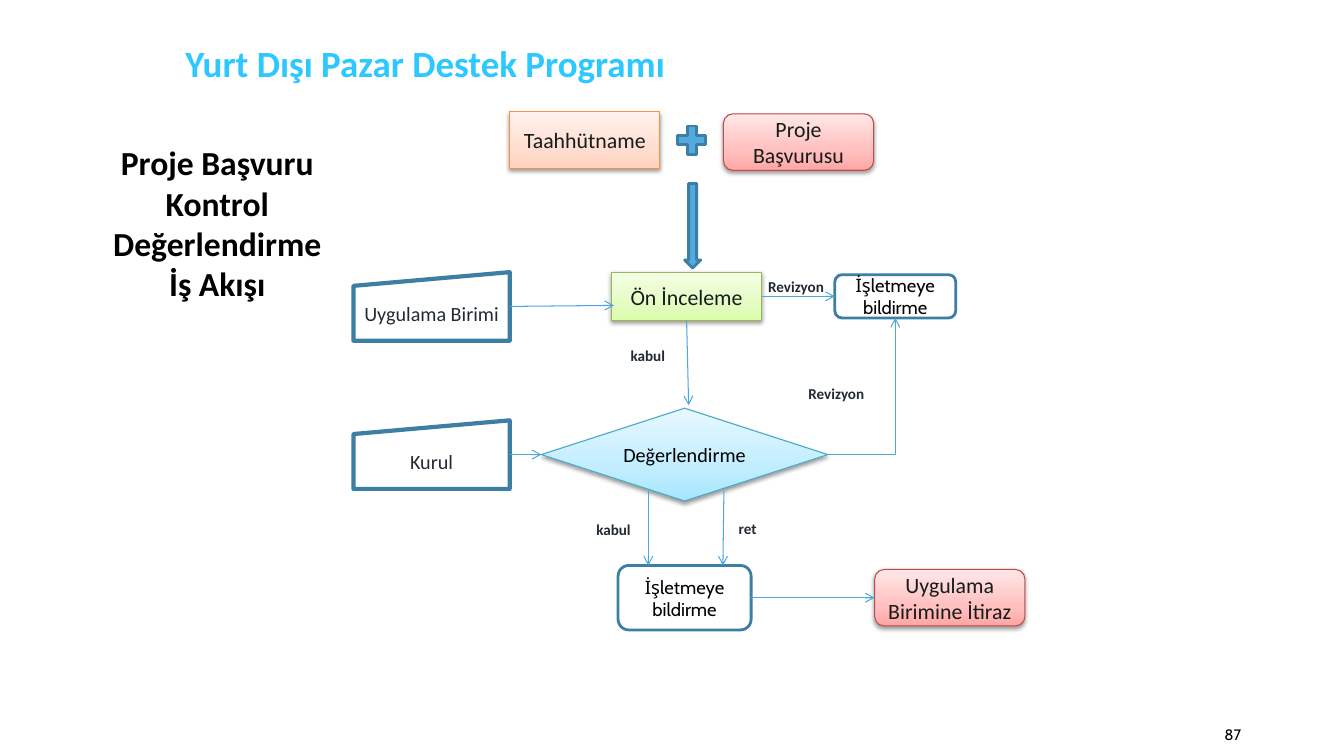
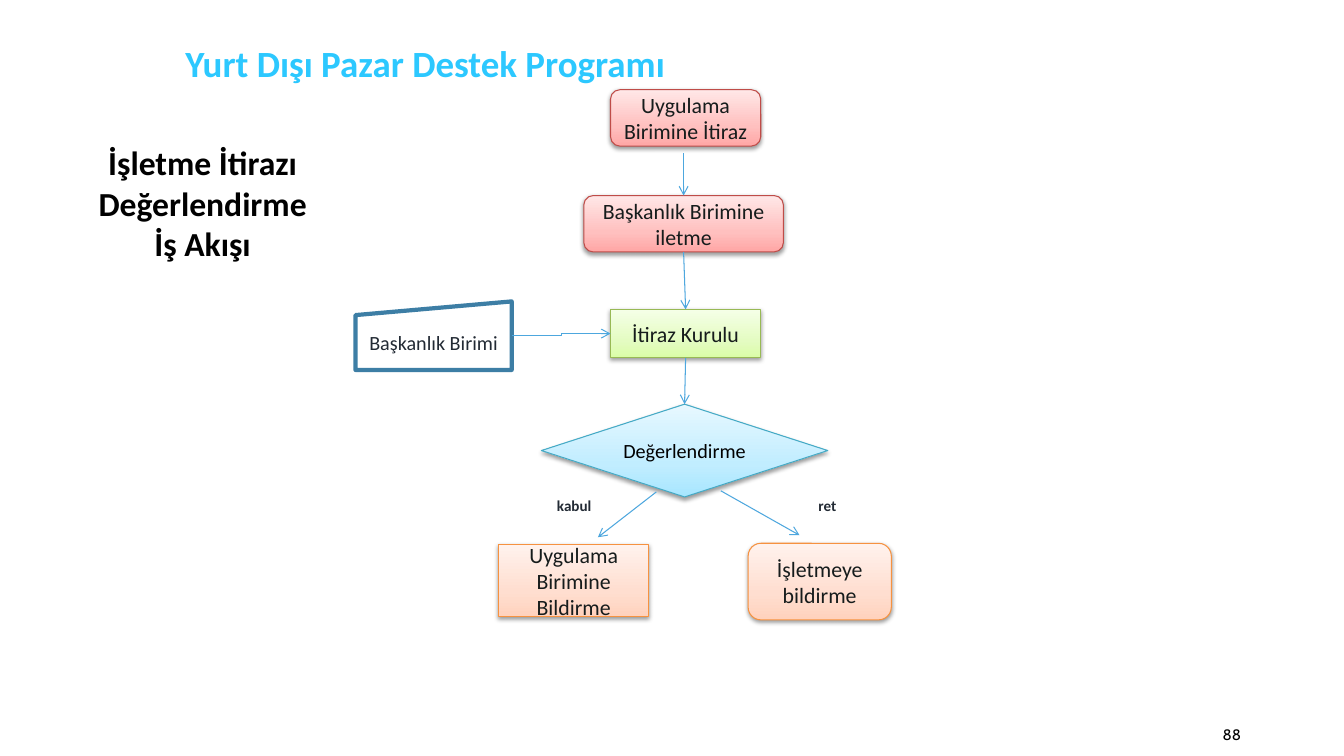
"""Builds two flowchart slides on project application and objection review."""
from copy import deepcopy
from dataclasses import dataclass

from lxml import etree
from pptx import Presentation, util as u
from pptx.dml.color import RGBColor
from pptx.enum import shapes as es, text as et
from pptx.oxml.ns import qn

SHAPE = es.MSO_SHAPE
ALIGN = et.PP_ALIGN
MIDDLE, TOP_ANCHOR = et.MSO_ANCHOR.MIDDLE, et.MSO_ANCHOR.TOP
TOP, LEFT, BOTTOM, RIGHT = range(4)


@dataclass(frozen=True)
class Type:
    size: float
    color: str
    font: str = "Calibri"
    bold: bool = False


@dataclass(frozen=True)
class Look:
    size: tuple
    fill: tuple
    line: str
    weight: float
    type: Type


class Theme:
    title = Type(26.4, "2CC8FF", bold=True)
    heading = Type(24, "000000", bold=True)
    label = Type(10.8, "222A34", bold=True)
    number = Type(10.8, "000000", "Cabin")
    step = Type(15.6, "161C1C")
    decision = Type(14.4, "000000")
    unit = Type(14.4, "222A34")
    notice = Type(13.2, "000000", "Cabin")
    flow, outline, accent = "4DA7DE", "3D7EA5", "52AADF"
    stops = (0, 0.35, 1)
    inset = (0.09, 0.05)


LOOKS = {
    "red": Look((1.49, 0.56), ("FFA6A5", "FFC0BF", "FFE7E7"), "BF4C48", 0.75, Theme.step),
    "green": Look((1.49, 0.48), ("DAFDA7", "E4FCC2", "F5FFE7"), "98B955", 0.75, Theme.step),
    "orange": Look((1.49, 0.56), ("FFD2BD", "FFDED0", "FFF2ED"), "F69240", 0.75, Theme.step),
    "blue": Look((2.84, 0.92), ("A7E6FF", "C1EDFF", "E7F8FF"), "46AAC5", 0.75, Theme.decision),
    "unit": Look((1.55, 0.68), (), Theme.outline, 3, Theme.unit),
    "notice": Look((1.32, 0.64), ("FFFFFF",), Theme.outline, 2, Theme.notice),
    "sign": Look((0.38, 0.38), (Theme.accent,), Theme.outline, 2, Theme.step),
}

PROGRAMME = "Yurt Dışı Pazar Destek Programı"
FIRST_NUMBER = 87
TITLE_AT = (-0.04, 0.33, 8.52, 0.59)
NUMBER_AT = (9.29, 7.09, 3.11, 0.4)
LABEL_SIZE = (0.75, 0.28)

ROUND, RECT = SHAPE.ROUNDED_RECTANGLE, SHAPE.RECTANGLE
DECISION, INPUT = SHAPE.FLOWCHART_DECISION, SHAPE.FLOWCHART_MANUAL_INPUT

SLIDES = [
    {
        "heading": "Proje Başvuru Kontrol Değerlendirme\nİş Akışı",
        "heading_at": (0.81, 1.36, 2.69, 1.71),
        "nodes": {
            "application": ("Proje\nBaşvurusu", ROUND, "red", (7.92, 1.41)),
            "review": ("Ön İnceleme", RECT, "green", (6.81, 2.94)),
            "decision": ("Değerlendirme", DECISION, "blue", (6.79, 4.51)),
            "pledge": ("Taahhütname", RECT, "orange", (5.8, 1.39)),
            "office": ("Uygulama Birimi", INPUT, "unit", (4.28, 3.04)),
            "board": ("Kurul", INPUT, "unit", (4.28, 4.51)),
            "revise": ("İşletmeye bildirme", ROUND, "notice", (8.88, 2.94), (1.2, 0.43)),
            "result": ("İşletmeye bildirme", ROUND, "notice", (6.79, 5.93)),
            "objection": ("Uygulama Birimine İtiraz", ROUND, "red", (9.42, 5.93)),
            "plus": ("", SHAPE.MATH_PLUS, "sign", (6.86, 1.39)),
            "down": ("", SHAPE.DOWN_ARROW, "sign", (6.87, 2.24), (0.16, 0.84)),
        },
        "flows": [
            (("office", RIGHT), (6.09, 3.03)),
            (("review", BOTTOM), (6.83, 4.02)),
            (("board", RIGHT), ("decision", LEFT)),
            (("review", RIGHT), ("revise", LEFT)),
            ((6.43, 4.87), (6.43, 5.61)),
            ((7.18, 4.87), (7.17, 5.61)),
            (("result", RIGHT), ("objection", LEFT)),
            (("decision", RIGHT), ("revise", BOTTOM), "bentConnector2"),
        ],
        "labels": [("kabul", 6.05, 3.39), ("ret", 7.04, 5.1), ("kabul", 5.71, 5.11),
                   ("Revizyon", 7.52, 2.7), ("Revizyon", 7.92, 3.76)],
    },
    {
        "heading": "İşletme İtirazı Değerlendirme\nİş Akışı",
        "heading_at": (0.52, 1.36, 2.98, 1.31),
        "nodes": {
            "objection": ("Uygulama Birimine İtiraz", ROUND, "red", (6.8, 1.17)),
            "forward": ("Başkanlık Birimine iletme", ROUND, "red", (6.78, 2.22), (1.98, 0.56)),
            "panel": ("İtiraz Kurulu", RECT, "green", (6.8, 3.31)),
            "decision": ("Değerlendirme", DECISION, "blue", (6.79, 4.47)),
            "office": ("Uygulama Birimine Bildirme", RECT, "orange", (5.69, 5.76), (1.49, 0.72)),
            "presidency": ("Başkanlık Birimi", INPUT, "unit", (4.3, 3.33)),
            "result": ("İşletmeye bildirme", ROUND, "orange", (8.13, 5.77), (1.42, 0.76)),
        },
        "flows": [
            ((6.78, 1.52), ("forward", TOP)),
            (("forward", BOTTOM), ("panel", TOP)),
            (("panel", BOTTOM), ("decision", TOP)),
            (("presidency", RIGHT), ("panel", LEFT), "bentConnector3"),
            ((6.51, 4.88), (5.93, 5.33)),
            ((7.15, 4.87), (7.93, 5.31)),
        ],
        "labels": [("ret", 7.83, 4.88), ("kabul", 5.32, 4.88)],
    },
]


def rgb(value):
    return RGBColor.from_string(value)


def inches(values):
    return [u.Inches(value) for value in values]


def write(frame, words, style, anchor=MIDDLE, align=ALIGN.CENTER):
    frame.text = words
    frame.word_wrap = True
    frame.auto_size = et.MSO_AUTO_SIZE.NONE
    frame.vertical_anchor = anchor
    frame.margin_left = frame.margin_right = u.Inches(Theme.inset[0])
    frame.margin_top = frame.margin_bottom = u.Inches(Theme.inset[1])
    for paragraph in frame.paragraphs:
        paragraph.alignment = align
        paragraph.space_before = u.Pt(0)
        for run in paragraph.runs:
            run.font.name, run.font.size = style.font, u.Pt(style.size)
            run.font.bold, run.font.color.rgb = style.bold, rgb(style.color)


def place(holder, box):
    holder.left, holder.top, holder.width, holder.height = inches(box)


def add_text(slide, words, box, style, **layout):
    write(slide.shapes.add_textbox(*inches(box)).text_frame, words, style, **layout)


def paint(node, look):
    node.shadow.inherit = False
    node.line.color.rgb, node.line.width = rgb(look.line), u.Pt(look.weight)
    if not look.fill:
        node.fill.background()
    elif len(look.fill) == 1:
        node.fill.solid()
        node.fill.fore_color.rgb = rgb(look.fill[0])
    else:
        node.fill.gradient()
        node.fill.gradient_angle = 90
        stop_list = node._element.spPr.find(".//" + qn("a:gsLst"))
        stop_list.append(deepcopy(stop_list[0]))
        for stop, position, color in zip(node.fill.gradient_stops, Theme.stops, look.fill):
            stop.position, stop.color.rgb = position, rgb(color)
        effects = node._element.spPr.find(qn("a:effectLst"))
        shade = etree.SubElement(effects, qn("a:outerShdw"), blurRad="40000", dist="20000",
                                 dir="5400000", rotWithShape="0")
        black = etree.SubElement(shade, qn("a:srgbClr"), val="000000")
        etree.SubElement(black, qn("a:alpha"), val="38000")


def add_node(slide, words, kind, look_name, centre, size=None):
    look = LOOKS[look_name]
    width, height = size or look.size
    box = (centre[0] - width / 2, centre[1] - height / 2, width, height)
    node = slide.shapes.add_shape(kind, *inches(box))
    paint(node, look)
    if words:
        write(node.text_frame, words, look.type)
    return node


def add_flow(slide, nodes, start, end, bend=None):
    kind = es.MSO_CONNECTOR.ELBOW if bend else es.MSO_CONNECTOR.STRAIGHT
    flow = slide.shapes.add_connector(kind, 0, 0, 0, 0)
    if start[0] in nodes:
        flow.begin_connect(nodes[start[0]], start[1])
    else:
        flow.begin_x, flow.begin_y = inches(start)
    if end[0] in nodes:
        flow.end_connect(nodes[end[0]], end[1])
    else:
        flow.end_x, flow.end_y = inches(end)
    flow.line.color.rgb, flow.line.width = rgb(Theme.flow), u.Pt(0.75)
    properties = flow._element.spPr
    if bend:
        properties.find(qn("a:prstGeom")).set("prst", bend)
    etree.SubElement(properties.find(qn("a:ln")), qn("a:tailEnd"), type="arrow")
    etree.SubElement(properties, qn("a:effectLst"))


def add_heading(body, content):
    place(body, content["heading_at"])
    write(body.text_frame, content["heading"], Theme.heading, anchor=TOP_ANCHOR)
    for paragraph in body.text_frame.paragraphs:
        properties = paragraph._p.get_or_add_pPr()
        properties.set("marL", "0")
        properties.set("indent", "0")
        etree.SubElement(properties, qn("a:buNone"))


def build_slide(deck, number, content):
    slide = deck.slides.add_slide(deck.slide_layouts[1])
    place(slide.shapes.title, TITLE_AT)
    write(slide.shapes.title.text_frame, PROGRAMME, Theme.title)
    add_heading(slide.placeholders[1], content)
    nodes = {key: add_node(slide, *node) for key, node in content["nodes"].items()}
    for flow in content["flows"]:
        add_flow(slide, nodes, *flow)
    for words, left, top in content["labels"]:
        add_text(slide, words, (left, top, *LABEL_SIZE), Theme.label, anchor=TOP_ANCHOR)
    add_text(slide, str(number), NUMBER_AT, Theme.number, align=ALIGN.RIGHT)


def main():
    deck = Presentation()
    deck.slide_width, deck.slide_height = inches((13.33, 7.5))
    for number, content in enumerate(SLIDES, FIRST_NUMBER):
        build_slide(deck, number, content)
    deck.save("out.pptx")


if __name__ == "__main__":
    main()
